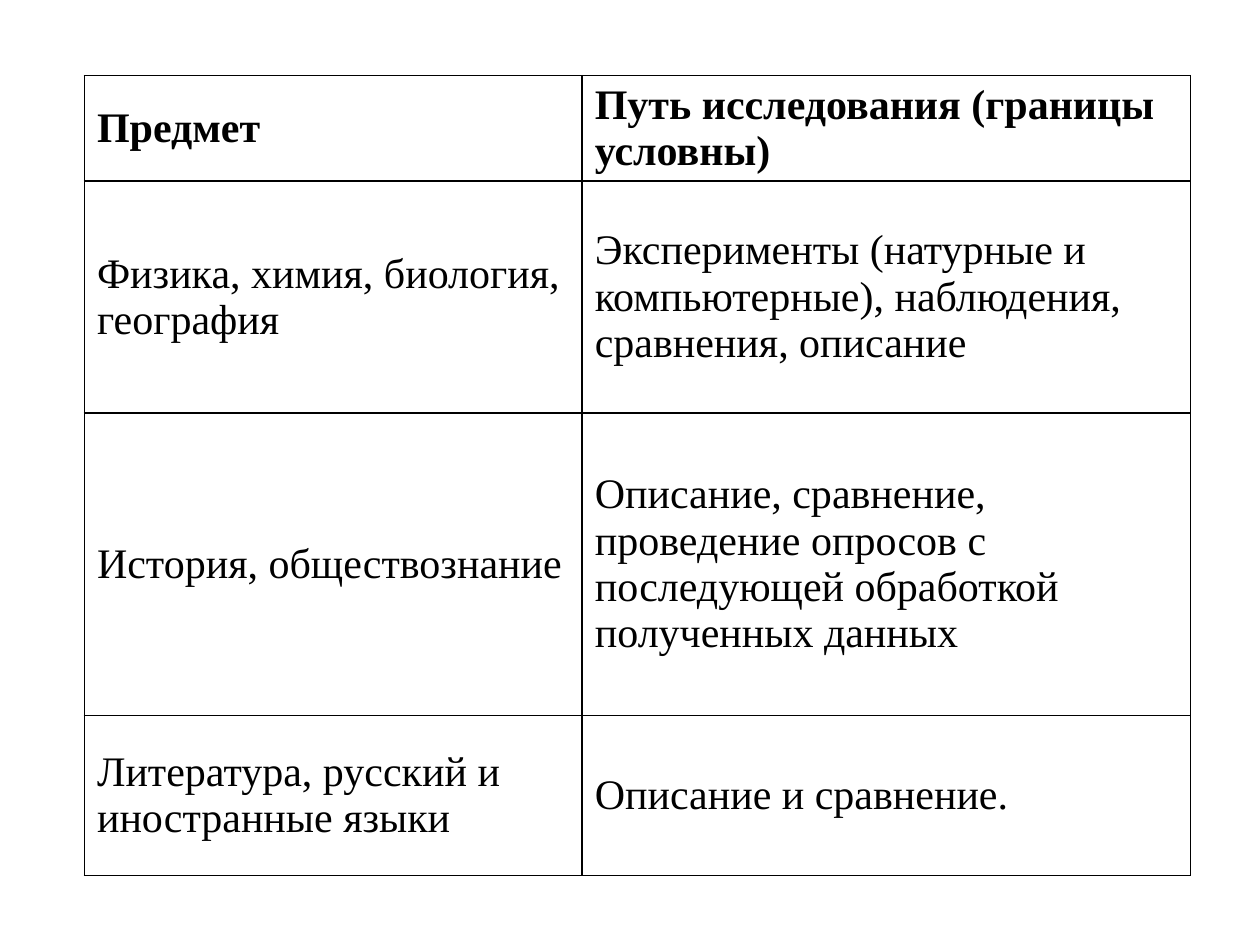
from dataclasses import dataclass

from lxml import etree
from pptx import Presentation
from pptx import util as u
from pptx.dml.color import RGBColor
from pptx.enum import text
from pptx.oxml import ns


@dataclass(frozen=True)
class Theme:
    """Colours, type and line widths of the slide."""
    ink: str = "000000"
    paper: str = "FFFFFF"
    font: str = "Times New Roman"
    size: int = 24
    rule: float = 1


THEME = Theme()
SLIDE_SIZE = u.Inches(10), u.Inches(7.5)
COLUMN_SHARES = 0.45, 0.55
ROW_HEIGHTS = 0.71, 1.84, 2.4, 1.27
METHODS = [
    ("Предмет", "Путь исследования (границы условны)"),
    ("Физика, химия, биология, география",
     "Эксперименты (натурные и компьютерные), наблюдения, сравнения, описание"),
    ("История, обществознание",
     "Описание, сравнение, проведение опросов с последующей обработкой полученных данных"),
    ("Литература, русский и иностранные языки", "Описание и сравнение."),
]


def rule_cell(cell):
    """Draw a solid rule on every side of a cell."""
    properties = cell._tc.get_or_add_tcPr()
    for position, side in enumerate(("lnL", "lnR", "lnT", "lnB")):
        border = etree.Element(ns.qn(f"a:{side}"), w=str(u.Pt(THEME.rule)))
        fill = etree.SubElement(border, ns.qn("a:solidFill"))
        etree.SubElement(fill, ns.qn("a:srgbClr"), val=THEME.ink)
        properties.insert(position, border)


def write_cell(cell, wording, heading):
    """Fill and format one cell."""
    cell.fill.solid()
    cell.fill.fore_color.rgb = RGBColor.from_string(THEME.paper)
    rule_cell(cell)
    cell.vertical_anchor = text.MSO_ANCHOR.MIDDLE
    cell.text_frame.text = wording
    font = cell.text_frame.paragraphs[0].runs[0].font
    font.name, font.size, font.bold = THEME.font, u.Pt(THEME.size), heading
    font.color.rgb = RGBColor.from_string(THEME.ink)


def add_methods_table(slide, left, top, width, height):
    """Place the table of subjects and research methods in the given box."""
    methods = slide.shapes.add_table(
        len(METHODS), len(COLUMN_SHARES), left, top, width, height).table
    for column, share in zip(methods.columns, COLUMN_SHARES):
        column.width = round(width * share)
    for row, wordings, share in zip(methods.rows, METHODS, ROW_HEIGHTS):
        row.height = round(height * share / sum(ROW_HEIGHTS))
        for cell, wording in zip(row.cells, wordings):
            write_cell(cell, wording, heading=wordings is METHODS[0])


def main():
    """Build and save the slide."""
    deck = Presentation()
    deck.slide_width, deck.slide_height = SLIDE_SIZE
    slide = deck.slides.add_slide(deck.slide_layouts[6])
    add_methods_table(slide, u.Inches(0.67), u.Inches(0.6),
                      u.Inches(8.78), u.Inches(sum(ROW_HEIGHTS)))
    deck.save("out.pptx")


if __name__ == "__main__":
    main()
